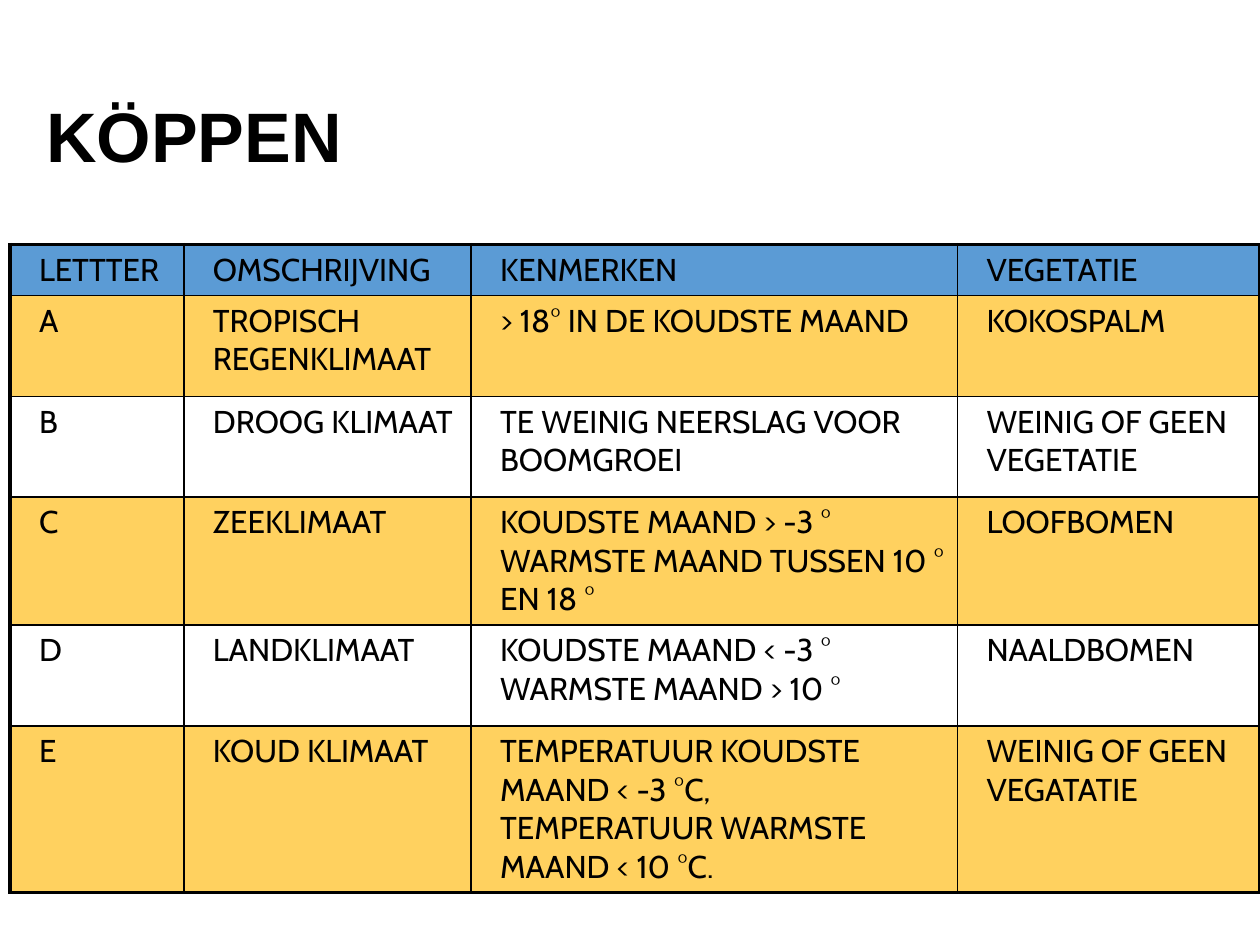
from lxml.etree import SubElement
from pptx import Presentation
from pptx.dml.color import RGBColor
from pptx.enum.text import MSO_ANCHOR as Anchor
from pptx.oxml.ns import qn
from pptx.util import Inches, Pt

BLACK = RGBColor(0x00, 0x00, 0x00)
BLUE = RGBColor(0x5B, 0x9B, 0xD5)
YELLOW = RGBColor(0xFF, 0xD1, 0x5F)

TITLE_FORMAT = {"name": "Arial", "size": Pt(40), "bold": True}
CELL_FORMAT = {"name": "Cabin", "size": Pt(18), "bold": False}

COL_WIDTHS = [1.38, 2.28, 3.86, 2.4]
ROW_HEIGHTS = [0.4, 0.8, 0.8, 1, 0.8, 1.3]
CLIMATES = [
    ["LETTTER", "OMSCHRIJVING", "KENMERKEN", "VEGETATIE"],
    ["A", "TROPISCH REGENKLIMAAT", "> 18° IN DE KOUDSTE MAAND", "KOKOSPALM"],
    ["B", "DROOG KLIMAAT", "TE WEINIG NEERSLAG VOOR BOOMGROEI",
     "WEINIG OF GEEN VEGETATIE"],
    ["C", "ZEEKLIMAAT",
     "KOUDSTE MAAND > -3 °\nWARMSTE MAAND TUSSEN 10 ° EN 18 °", "LOOFBOMEN"],
    ["D", "LANDKLIMAAT", "KOUDSTE MAAND < -3 °\nWARMSTE MAAND > 10 °",
     "NAALDBOMEN"],
    ["E", "KOUD KLIMAAT",
     "TEMPERATUUR KOUDSTE MAAND < -3 °C,\nTEMPERATUUR WARMSTE MAAND < 10 °C.",
     "WEINIG OF GEEN VEGATATIE"],
]


def format_run(r, formats):
    """Apply the font values and black colour to a run."""
    for name, value in formats.items():
        setattr(r.font, name, value)
    r.font.color.rgb = BLACK


def add_borders(cell, outer):
    """Draw the four cell borders, thicker on the outer sides."""
    tc_pr = cell._tc.get_or_add_tcPr()
    for side in "LRTB":
        width = Pt(2.25 if side in outer else 1)
        ln = SubElement(tc_pr, qn(f"a:ln{side}"), w=str(width))
        fill = SubElement(ln, qn("a:solidFill"))
        SubElement(fill, qn("a:srgbClr"), val=str(BLACK))


def fill_cell(cell, text, color):
    """Set the text, indent and fill of a cell."""
    if color is None:
        cell.fill.background()
    else:
        cell.fill.solid()
        cell.fill.fore_color.rgb = color
    cell.text = text
    for p in cell.text_frame.paragraphs:
        p._p.get_or_add_pPr().set("marL", str(Inches(0.13)))
        for r in p.runs:
            format_run(r, CELL_FORMAT)


def add_title(slide, text, left, top, width, height):
    """Place the slide title in the given box."""
    tf = slide.shapes.add_textbox(left, top, width, height).text_frame
    tf.word_wrap = True
    tf.vertical_anchor = Anchor.BOTTOM
    r = tf.paragraphs[0].add_run()
    r.text = text
    format_run(r, TITLE_FORMAT)


def add_climate_table(slide, left, top, width, height):
    """Place the climate table in the given box."""
    last_row, last_col = len(ROW_HEIGHTS) - 1, len(COL_WIDTHS) - 1
    table = slide.shapes.add_table(
        last_row + 1, last_col + 1, left, top, width, height).table
    table.first_row = table.horz_banding = False
    for col, size in zip(table.columns, COL_WIDTHS):
        col.width = Inches(size)
    for row, size in zip(table.rows, ROW_HEIGHTS):
        row.height = Inches(size)
    for i, texts in enumerate(CLIMATES):
        color = BLUE if i == 0 else YELLOW if i % 2 else None
        for j, text in enumerate(texts):
            edges = {"L": j == 0, "R": j == last_col,
                     "T": i == 0, "B": i == last_row}
            cell = table.cell(i, j)
            add_borders(cell, [side for side, on in edges.items() if on])
            fill_cell(cell, text, color)


def main():
    """Build the slide and save it."""
    prs = Presentation()
    prs.slide_width, prs.slide_height = Inches(10), Inches(7.5)
    slide = prs.slides.add_slide(prs.slide_layouts[6])
    add_climate_table(slide, Inches(0.08), Inches(1.94),
                      Inches(9.92), Inches(5.1))
    add_title(slide, "KÖPPEN", Inches(0.27), Inches(0.68),
              Inches(7.48), Inches(0.77))
    prs.save("out.pptx")


if __name__ == "__main__":
    main()
